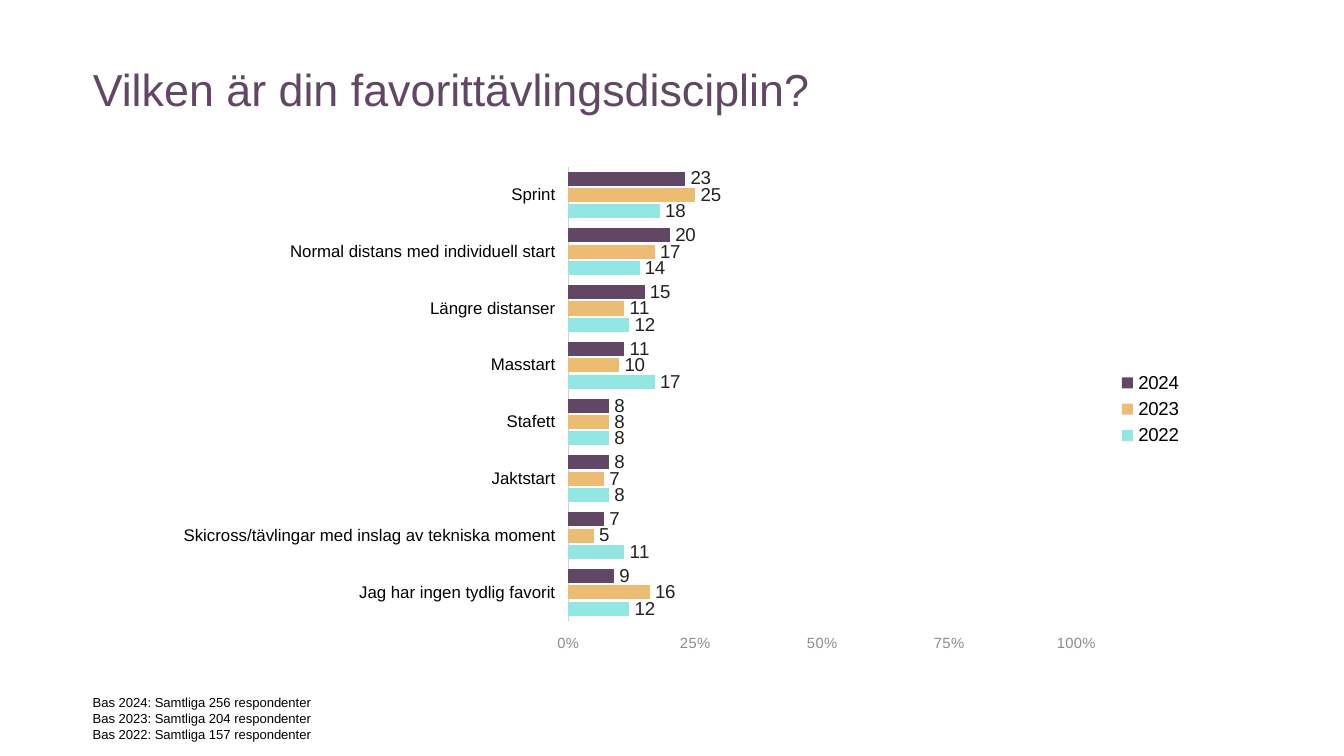
from lxml import etree
from pptx import Presentation
from pptx.chart.data import CategoryChartData
from pptx.dml.color import RGBColor
from pptx.enum import chart as ch, text as tx
from pptx.oxml.ns import qn
from pptx.util import Inches, Pt

TITLE = "Vilken är din favorittävlingsdisciplin?"
CATS = [
    "Jag har ingen tydlig favorit",
    "Skicross/tävlingar med inslag av tekniska moment",
    "Jaktstart",
    "Stafett",
    "Masstart",
    "Längre distanser",
    "Normal distans med individuell start",
    "Sprint",
]
SERIES = [
    ("2022", "92E7E2", [12, 11, 8, 8, 17, 12, 14, 18]),
    ("2023", "EBBC71", [16, 5, 7, 8, 10, 11, 17, 25]),
    ("2024", "624764", [9, 7, 8, 8, 11, 15, 20, 23]),
]
BASES = [("2024", 256), ("2023", 204), ("2022", 157)]
WIDE, HIGH = 7.69, 3.75
PLOT = {"x": 3.02 / WIDE, "y": 0.07 / HIGH, "w": 3.78 / WIDE, "h": 3.38 / HIGH}


def style(font, size, color):
    font.name = "Arial"
    font.size = Pt(size)
    font.bold = False
    font.color.rgb = RGBColor.from_string(color)


def place(shape, left, top, width, height):
    shape.left, shape.top = Inches(left), Inches(top)
    shape.width, shape.height = Inches(width), Inches(height)


def write(shape, lines, size, color):
    frame = shape.text_frame
    frame.margin_left = frame.margin_right = 0
    frame.margin_top = frame.margin_bottom = 0
    frame.word_wrap = True
    frame.auto_size = tx.MSO_AUTO_SIZE.NONE
    frame.vertical_anchor = tx.MSO_ANCHOR.TOP
    frame.text = "\n".join(lines)
    for par in frame.paragraphs:
        par.alignment = tx.PP_ALIGN.LEFT
        style(par.font, size, color)


def set_plot(chart):
    area = chart._chartSpace.chart.plotArea
    for old in area.findall(qn("c:layout")):
        area.remove(old)
    layout = etree.Element(qn("c:layout"))
    area.insert(0, layout)
    manual = etree.SubElement(layout, qn("c:manualLayout"))
    parts = [("layoutTarget", "inner"), ("xMode", "edge"), ("yMode", "edge")]
    for tag, val in parts + list(PLOT.items()):
        etree.SubElement(manual, qn(f"c:{tag}")).set("val", str(val))


def set_axis(axis, size, color):
    axis.has_major_gridlines = False
    axis.major_tick_mark = axis.minor_tick_mark = ch.XL_TICK_MARK.NONE
    axis.tick_label_position = ch.XL_TICK_LABEL_POSITION.LOW
    style(axis.tick_labels.font, size, color)


def add_bars(slide):
    data = CategoryChartData(number_format="0")
    data.categories = CATS
    for name, _, vals in SERIES:
        data.add_series(name, vals)
    box = [Inches(n) for n in (1.21, 1.17, WIDE, HIGH)]
    chart = slide.shapes.add_chart(
        ch.XL_CHART_TYPE.BAR_CLUSTERED, *box, data).chart
    style(chart.font, 10, "212121")
    chart.has_title = False
    chart.has_legend = True
    chart.legend.position = ch.XL_LEGEND_POSITION.RIGHT
    chart.legend.include_in_layout = False
    style(chart.legend.font, 10, "000000")
    set_plot(chart)

    cat, val = chart.category_axis, chart.value_axis
    set_axis(cat, 9, "000000")
    cat.format.line.color.rgb = RGBColor.from_string("D1D1D1")
    cat.format.line.width = Pt(0.75)
    set_axis(val, 7.9, "8C8C8C")
    val.format.line.fill.background()
    val.minimum_scale, val.maximum_scale, val.major_unit = 0, 100, 25
    val.tick_labels.number_format = "General\\%"
    val.tick_labels.number_format_is_linked = False

    plot = chart.plots[0]
    plot.gap_width, plot.overlap = 70, -16
    plot.vary_by_categories = False
    for series, (_, color, _) in zip(plot.series, SERIES):
        series.format.fill.solid()
        series.format.fill.fore_color.rgb = RGBColor.from_string(color)
        labels = series.data_labels
        labels.show_value = True
        labels.position = ch.XL_LABEL_POSITION.OUTSIDE_END
        labels.number_format = "0"
        labels.number_format_is_linked = False
        style(labels.font, 10, "212121")


def main():
    deck = Presentation()
    deck.slide_width = Inches(10)
    deck.slide_height = deck.slide_width * 9 // 16
    slide = deck.slides.add_slide(deck.slide_layouts[5])
    title = slide.shapes.title
    place(title, 0.69, 0.46, 8.58, 0.46)
    write(title, [TITLE], 24, "624764")
    add_bars(slide)
    note = slide.shapes.add_textbox(0, 0, 0, 0)
    place(note, 0.69, 5.17, 1.8, 0.31)
    lines = [f"Bas {year}: Samtliga {count} respondenter" for year, count in BASES]
    write(note, lines, 7, "000000")
    deck.save("out.pptx")


if __name__ == "__main__":
    main()
